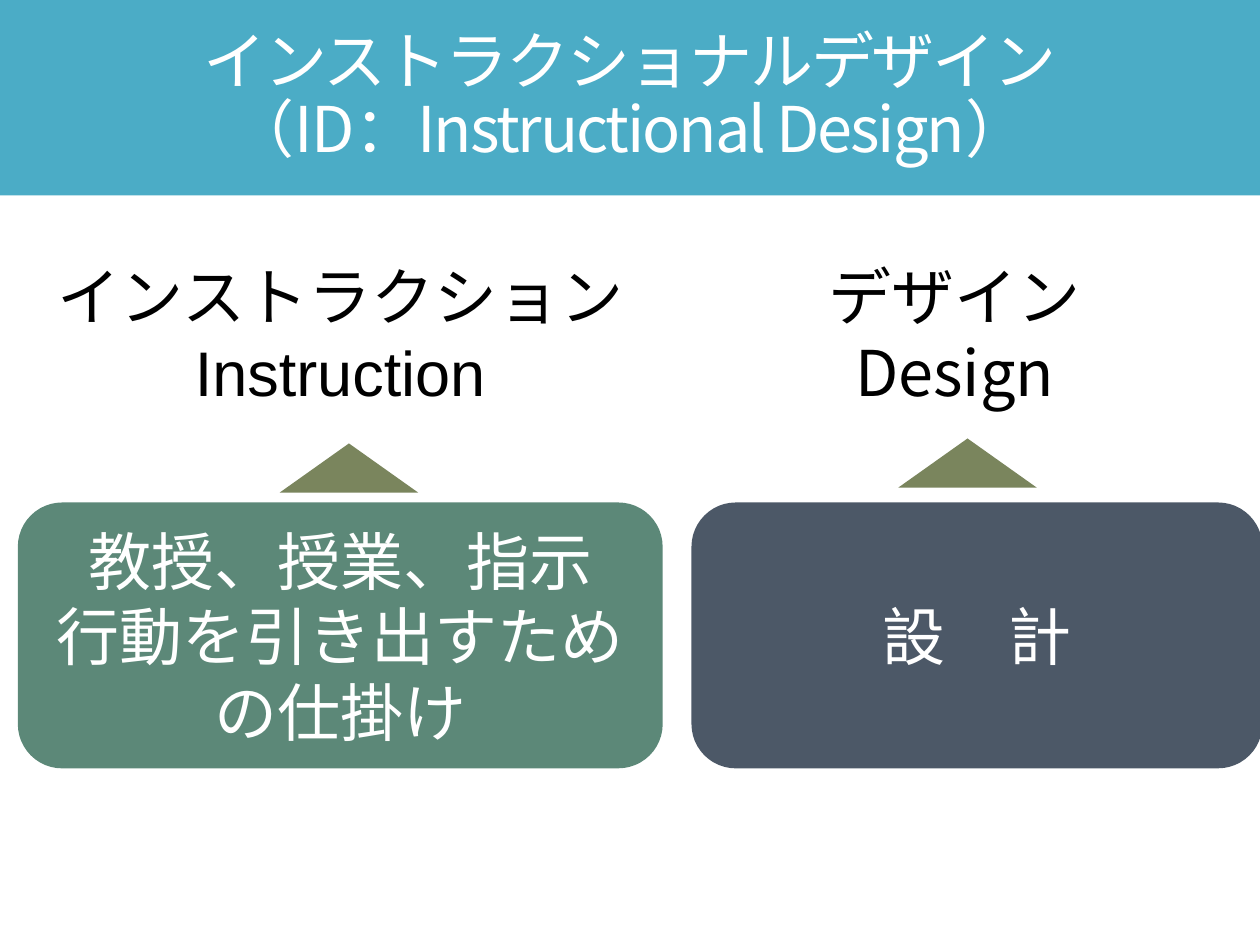
from pptx import Presentation
from pptx.dml.color import RGBColor
from pptx.enum.shapes import MSO_SHAPE
from pptx.enum.text import MSO_ANCHOR, PP_ALIGN
from pptx.oxml.ns import qn
from pptx.util import Cm, Pt
from lxml import etree

RECTANGLE = MSO_SHAPE.RECTANGLE
ROUNDED = MSO_SHAPE.ROUNDED_RECTANGLE
TRIANGLE = MSO_SHAPE.ISOSCELES_TRIANGLE
MIDDLE = MSO_ANCHOR.MIDDLE
CENTER = PP_ALIGN.CENTER

LATIN_FONT = "Arial"
JAPANESE_FONT = "Noto Sans CJK JP"
WHITE, BLACK = "FFFFFF", "000000"
TEAL, GREEN, SLATE, OLIVE = "4BACC6", "5C8878", "4C5867", "7A855D"


def color(value):
    """Turn a hex string into a colour."""
    return RGBColor.from_string(value)


def add_block(slide, kind, left, top, width, height, fill):
    """Add a flat filled shape, placed in centimetres."""
    shape = slide.shapes.add_shape(kind, Cm(left), Cm(top), Cm(width), Cm(height))
    shape.shadow.inherit = False
    shape.fill.solid()
    shape.fill.fore_color.rgb = color(fill)
    shape.line.fill.background()
    return shape


def add_run(paragraph, text, font_name, text_color, spacing=0):
    """Add a 36 point run; spacing is in hundredths of a point."""
    run = paragraph.add_run()
    run.text = text
    run.font.name = font_name
    run.font.size = Pt(36)
    run.font.color.rgb = color(text_color)
    properties = run._r.get_or_add_rPr()
    etree.SubElement(properties, qn("a:ea")).set("typeface", JAPANESE_FONT)
    if spacing:
        properties.set("spc", str(spacing))


def center_text(shape):
    """Centre the text of a shape and return its first paragraph."""
    frame = shape.text_frame
    frame.word_wrap = True
    frame.vertical_anchor = MIDDLE
    frame.paragraphs[0].alignment = CENTER
    return frame.paragraphs[0]


def add_box(slide, position, fill, lines, font_name, text_color):
    """Add a rounded box with one centred paragraph per line."""
    shape = add_block(slide, ROUNDED, *position, fill)
    paragraph = center_text(shape)
    for index, line in enumerate(lines):
        if index:
            paragraph = shape.text_frame.add_paragraph()
            paragraph.alignment = CENTER
        add_run(paragraph, line, font_name, text_color)


def add_title(slide, lines):
    """Add the full-width title band with its broken heading."""
    paragraph = center_text(add_block(slide, RECTANGLE, 0, 0, 25.4, 3.94, TEAL))
    paragraph.line_spacing = 0.9
    for index, line in enumerate(lines):
        if index:
            paragraph.add_line_break()
        add_run(paragraph, line, JAPANESE_FONT, WHITE, -120)


def main():
    """Build the slide and save it."""
    presentation = Presentation()
    presentation.slide_width, presentation.slide_height = Cm(25.4), Cm(19.05)
    slide = presentation.slides.add_slide(presentation.slide_layouts[6])

    add_box(slide, (0.36, 4.5, 13, 4.45), WHITE,
            ["インストラクション", "Instruction"], LATIN_FONT, BLACK)
    add_box(slide, (13.49, 4.52, 11.51, 4.39), WHITE,
            ["デザイン", "Design"], JAPANESE_FONT, BLACK)
    add_box(slide, (0.36, 10.13, 13, 5.36), GREEN,
            ["教授、授業、指示", "行動を引き出すための仕掛け"], LATIN_FONT, WHITE)
    add_box(slide, (13.94, 10.13, 11.51, 5.36), SLATE,
            ["設　計"], LATIN_FONT, WHITE)
    for left, top in ((5.64, 8.94), (18.11, 8.84)):
        add_block(slide, TRIANGLE, left, top, 2.79, 0.99, OLIVE)
    add_title(slide, ["インストラクショナルデザイン", "（ID：Instructional Design）"])

    presentation.save("out.pptx")


if __name__ == "__main__":
    main()
